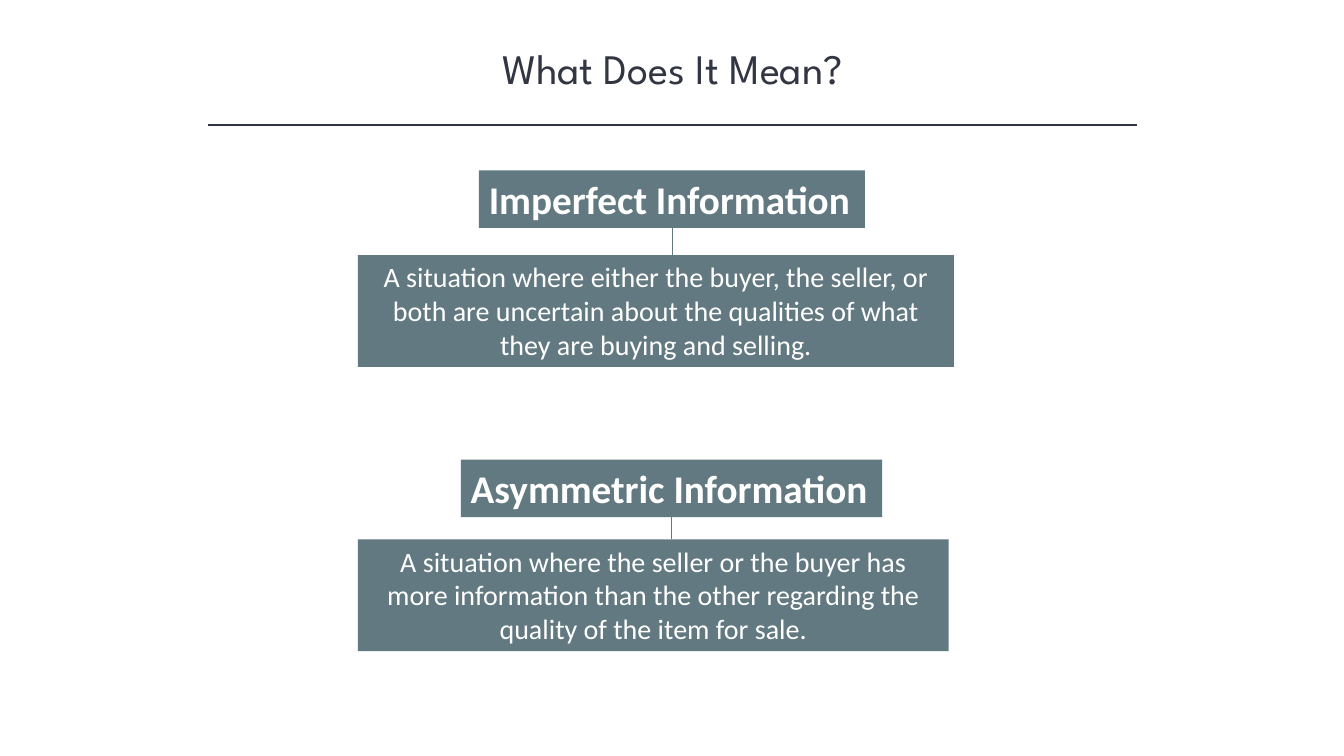
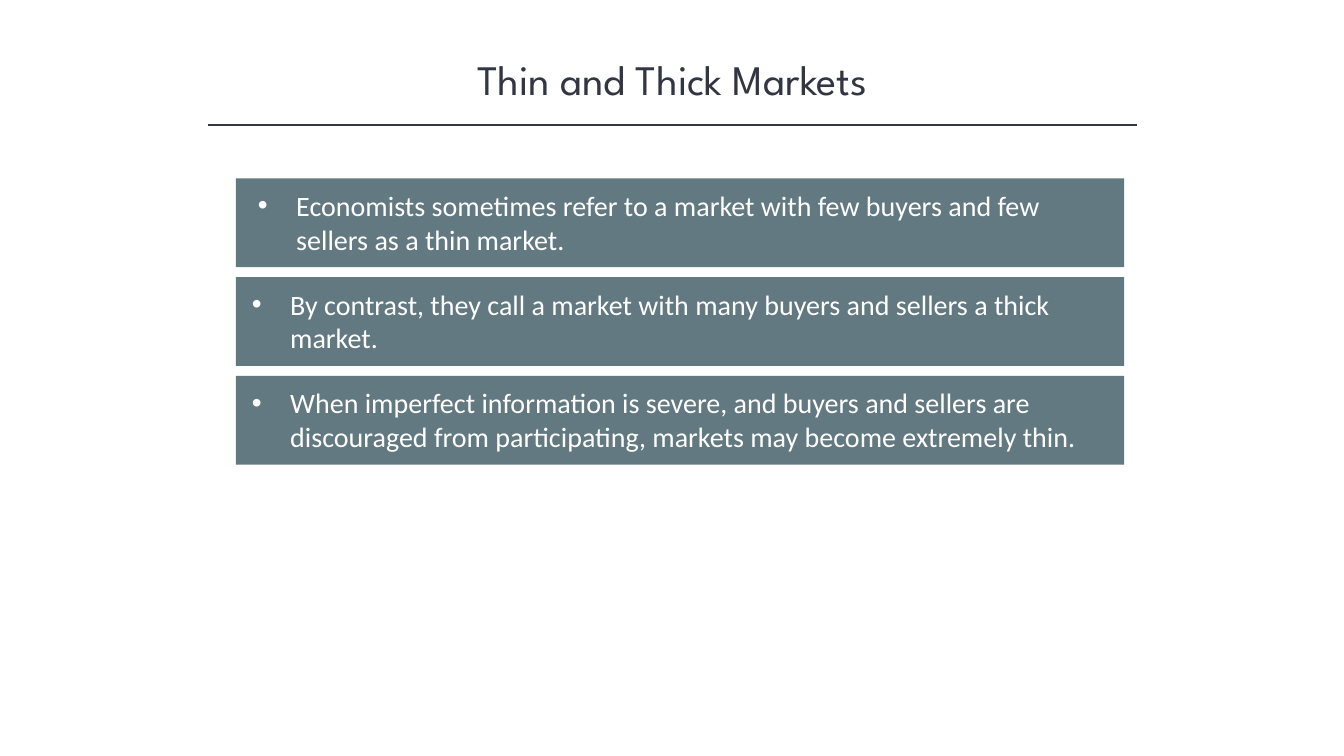
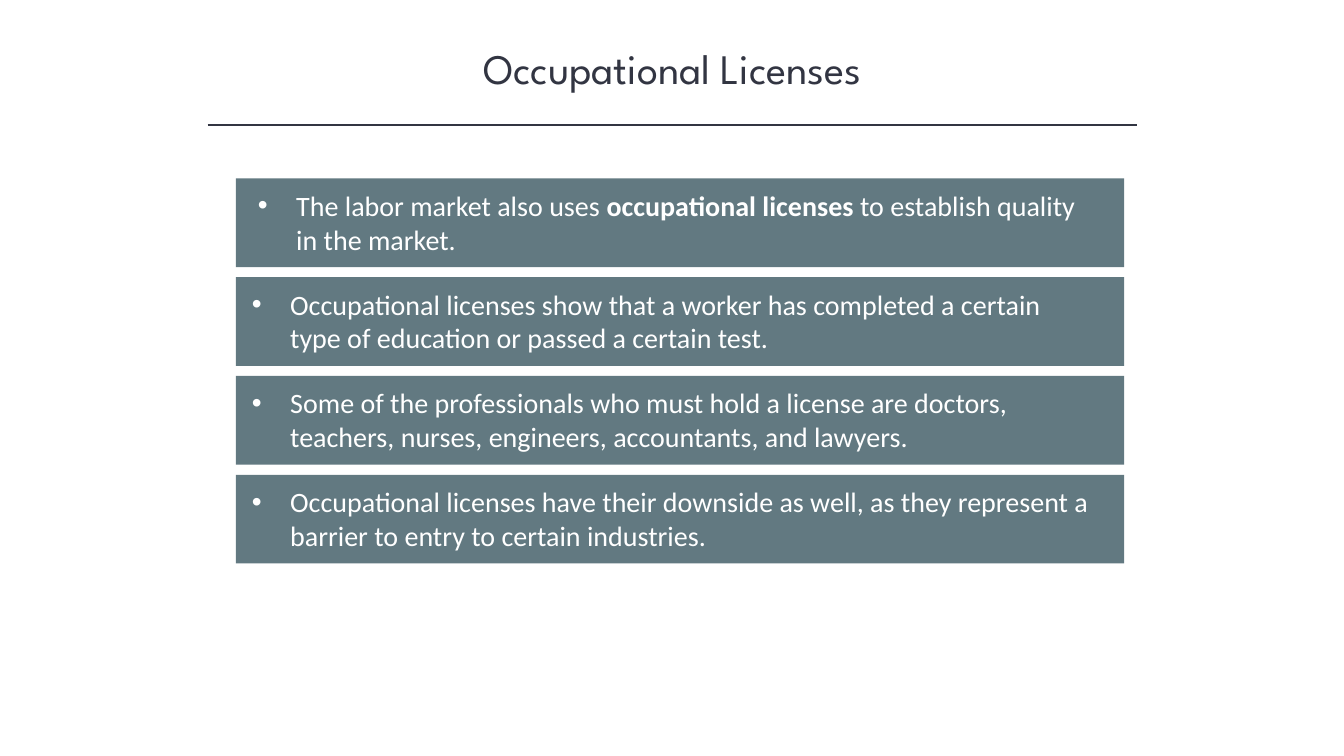
import pptx
import pptx.util
import pptx.dml.color
import pptx.enum.shapes
import pptx.enum.text
import lxml.etree

Inches, Pt = pptx.util.Inches, pptx.util.Pt
LEFT = pptx.enum.text.PP_ALIGN.LEFT
CENTER = pptx.enum.text.PP_ALIGN.CENTER
TOP = pptx.enum.text.MSO_ANCHOR.TOP
STRAIGHT = pptx.enum.shapes.MSO_CONNECTOR.STRAIGHT
RECTANGLE = pptx.enum.shapes.MSO_SHAPE.RECTANGLE
DRAWING_NS = "{http://schemas.openxmlformats.org/drawingml/2006/main}"
INK, SLATE, WHITE = "323542", "627981", "FFFFFF"


def color(hex_code):
    return pptx.dml.color.RGBColor.from_string(hex_code)


def add_box(shapes, left, top, width, height, text="", size=20, align=LEFT, bold=False):
    """Add a slate rectangle; a phrase between asterisks is set in bold."""
    box = shapes.add_shape(RECTANGLE, Inches(left), Inches(top), Inches(width), Inches(height))
    box.shadow.inherit = False
    box.fill.solid()
    box.fill.fore_color.rgb = color(SLATE)
    box.line.fill.background()
    box.text_frame.word_wrap = True
    box.text_frame.vertical_anchor = TOP
    paragraph = box.text_frame.paragraphs[0]
    paragraph.alignment = align
    if text:
        for i, part in enumerate(text.split("*")):
            run = paragraph.add_run()
            run.text = part
            run.font.name = "Calibri"
            run.font.size = Pt(size)
            run.font.bold = bold or i % 2 == 1
            run.font.color.rgb = color(WHITE)
    return box


prs = pptx.Presentation()
prs.slide_width, prs.slide_height = Inches(13.33), Inches(7.5)
connectors = []  # (connector, colour, width in points)

# Titles and the rule below them
slides = []
for title_text, title_top in [
    ("What Does It Mean?", 0.37),
    ("Thin and Thick Markets", 0.48),
    ("Occupational Licenses", 0.37),
]:
    slide = prs.slides.add_slide(prs.slide_layouts[5])
    slides.append(slide)
    title = slide.shapes.title
    title.left, title.top = Inches(1.67), Inches(title_top)
    title.width, title.height = Inches(10), Inches(0.61)
    title.text_frame.text = title_text
    title.text_frame.vertical_anchor = TOP
    title.text_frame.auto_size = pptx.enum.text.MSO_AUTO_SIZE.NONE
    title.text_frame.paragraphs[0].alignment = CENTER
    title_font = title.text_frame.paragraphs[0].runs[0].font
    title_font.name, title_font.size = "League Spartan", Pt(30)
    title_font.color.rgb = color(INK)
    title_rule = slide.shapes.add_connector(
        STRAIGHT, Inches(2.06), Inches(1.24), Inches(11.28), Inches(1.24))
    connectors.append((title_rule, INK, 1))

# Terms with their definitions
terms = [
    ("Imperfect Information", 4.75, 1.69, 3.83,
     "A situation where either the buyer, the seller, or both are uncertain about "
     "the qualities of what they are buying and selling.", 2.53, 5.91),
    ("Asymmetric Information", 4.57, 4.56, 4.18,
     "A situation where the seller or the buyer has more information than the other "
     "regarding the quality of the item for sale.", 5.35, 5.86),
]
shapes = slides[0].shapes
for term, left, top, width, definition, definition_top, definition_width in terms:
    term_box = add_box(shapes, left, top, width, 0.57, term, size=28, bold=True)
    add_box(shapes, 3.55, definition_top, definition_width, 1.11, definition, align=CENTER)
    middle = Inches(left + width / 2)
    link = shapes.add_connector(
        STRAIGHT, middle, Inches(top + 0.57), middle, Inches(definition_top))
    link.begin_connect(term_box, 2)
    connectors.append((link, SLATE, 0.5))

# Stacked bands with one bulleted point each
thin_and_thick = [
    "Economists sometimes refer to a market with few buyers and few sellers as a thin market.",
    "By contrast, they call a market with many buyers and sellers a thick market.",
    "When imperfect information is severe, and buyers and sellers are discouraged from "
    "participating, markets may become extremely thin.",
]
licenses = [
    "The labor market also uses *occupational licenses *to establish quality in the market.",
    "Occupational licenses show that a worker has completed a certain type of education "
    "or passed a certain test.",
    "Some of the professionals who must hold a license are doctors, teachers, nurses, "
    "engineers, accountants, and lawyers.",
    "Occupational licenses have their downside as well, as they represent a barrier to "
    "entry to certain industries.",
]
for slide, points in zip(slides[1:], [thin_and_thick, licenses]):
    for row, point in enumerate(points):
        band_top = 1.77 + 0.98 * row
        band = slide.shapes.add_group_shape()
        add_box(band.shapes, 2.34, band_top, 8.81, 0.88)
        point_left = 2.46 if row == 0 else 2.4
        point_box = add_box(band.shapes, point_left, band_top + 0.05, 8.54, 0.77, point)
        properties = point_box.text_frame.paragraphs[0]._p.get_or_add_pPr()
        properties.set("marL", str(Inches(0.38)))
        properties.set("indent", str(-Inches(0.38)))
        lxml.etree.SubElement(properties, DRAWING_NS + "buFont", typeface="Arial")
        lxml.etree.SubElement(properties, DRAWING_NS + "buChar", char="•")

# Line style of all connectors
for connector, line_color, line_width in connectors:
    connector.line.color.rgb = color(line_color)
    connector.line.width = Pt(line_width)
    lxml.etree.SubElement(connector._element.spPr, DRAWING_NS + "effectLst")

prs.save("out.pptx")
